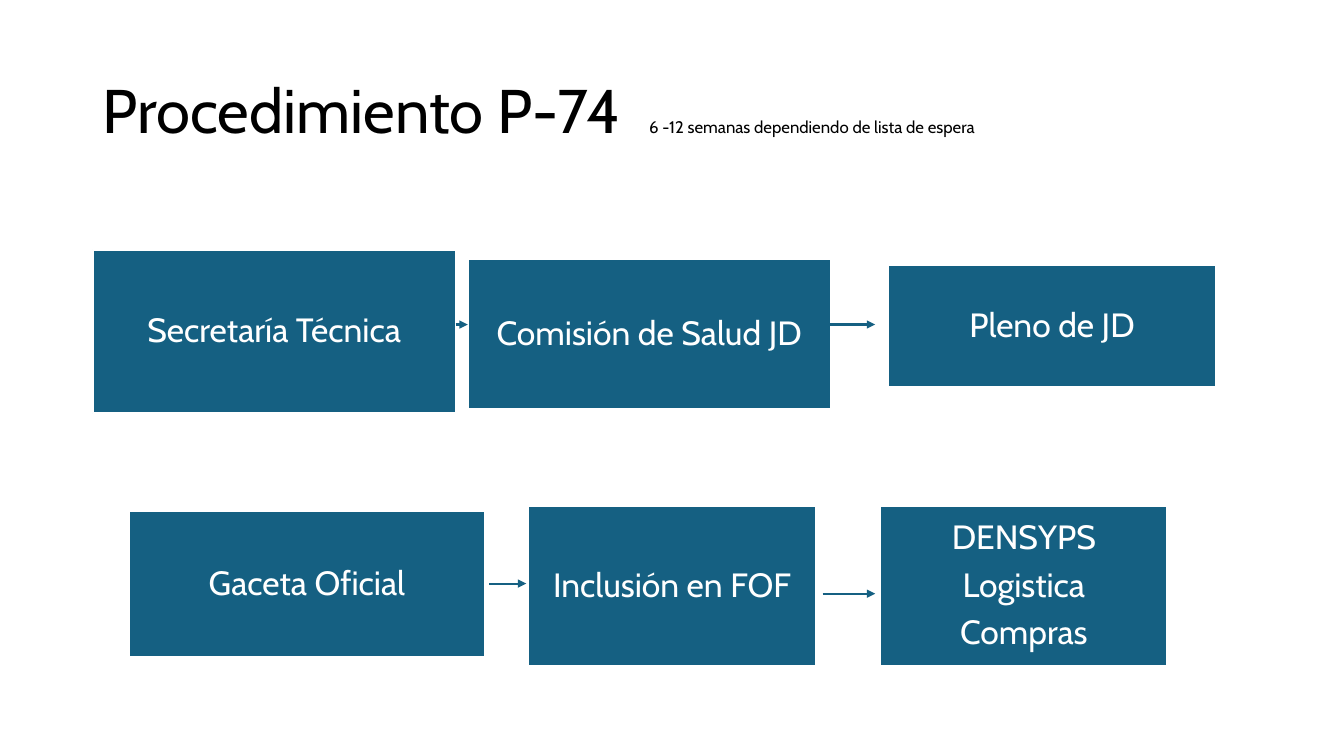
from lxml import etree
from pptx import Presentation, util as u
from pptx.dml.color import RGBColor
from pptx.enum import shapes, text
from pptx.oxml.ns import qn

COLOURS = {"ink": "000000", "paper": "FFFFFF", "step": "156082"}
PX = 9144


def px(*lengths):
    return [u.Emu(length * PX) for length in lengths]


def colour(name):
    return RGBColor.from_string(COLOURS[name])


def apply(target, values):
    for key, value in values.items():
        setattr(target, key, value)


class Flow:
    font = "Cabin"
    line_width = u.Pt(1.5)
    step_frame = dict(zip(
        ("margin_left", "margin_top", "margin_right", "margin_bottom"), px(10, 10, 10, 10)))
    frame = {"word_wrap": True, "vertical_anchor": text.MSO_ANCHOR.MIDDLE}
    step_paragraph = {"alignment": text.PP_ALIGN.CENTER, "line_spacing": 0.9,
                      "space_after": u.Pt(8)}

    def __init__(self, slide):
        self.slide = slide

    def run(self, paragraph, words, size, ink):
        run = paragraph.add_run()
        run.text = words
        apply(run.font, {"name": self.font, "size": u.Pt(size)})
        run.font.color.rgb = colour(ink)

    def title(self, box, parts):
        heading = self.slide.shapes.add_textbox(*px(*box)).text_frame
        apply(heading, self.frame)
        paragraph = heading.paragraphs[0]
        paragraph.line_spacing = 0.9
        for words, size in parts:
            self.run(paragraph, words, size, "ink")

    def step(self, box, lines):
        step = self.slide.shapes.add_shape(shapes.MSO_SHAPE.RECTANGLE, *px(*box))
        step.shadow.inherit = False
        step.fill.solid()
        step.fill.fore_color.rgb = colour("step")
        step.line.color.rgb = colour("paper")
        step.line.width = self.line_width
        label = step.text_frame
        apply(label, {**self.frame, **self.step_frame})
        for index, words in enumerate(lines):
            paragraph = label.add_paragraph() if index else label.paragraphs[0]
            apply(paragraph, self.step_paragraph)
            self.run(paragraph, words, 24, "paper")

    def arrow(self, start, end, y):
        arrow = self.slide.shapes.add_connector(
            shapes.MSO_CONNECTOR.STRAIGHT, *px(start, y, end, y))
        arrow.line.color.rgb = colour("step")
        arrow.line.width = self.line_width
        etree.SubElement(arrow.line._get_or_add_ln(), qn("a:tailEnd"), type="triangle")
        etree.SubElement(arrow._element.spPr, qn("a:effectLst"))


STEPS = [
    ((92, 248, 360, 162), ["Secretaría Técnica"]),
    ((464, 257, 360, 149), ["Comisión de Salud JD"]),
    ((881, 263, 325, 121), ["Pleno de JD"]),
    ((128, 507, 353, 145), ["Gaceta Oficial"]),
    ((524, 502, 285, 159), ["Inclusión en FOF"]),
    ((873, 502, 285, 159), ["DENSYPS", "Logistica", "Compras"]),
]
ARROWS = [(452, 464, 322), (823, 868, 322), (485, 522, 579), (816, 868, 589)]


def main():
    deck = Presentation()
    deck.slide_width, deck.slide_height = px(1333, 750)
    flow = Flow(deck.slides.add_slide(deck.slide_layouts[6]))
    flow.title((92, 40, 1150, 145), [
        ("Procedimiento P-74  ", 44),
        ("6 -12 semanas dependiendo de lista de espera", 12),
    ])
    for box, lines in STEPS:
        flow.step(box, lines)
    for start, end, y in ARROWS:
        flow.arrow(start, end, y)
    deck.save("out.pptx")


if __name__ == "__main__":
    main()
